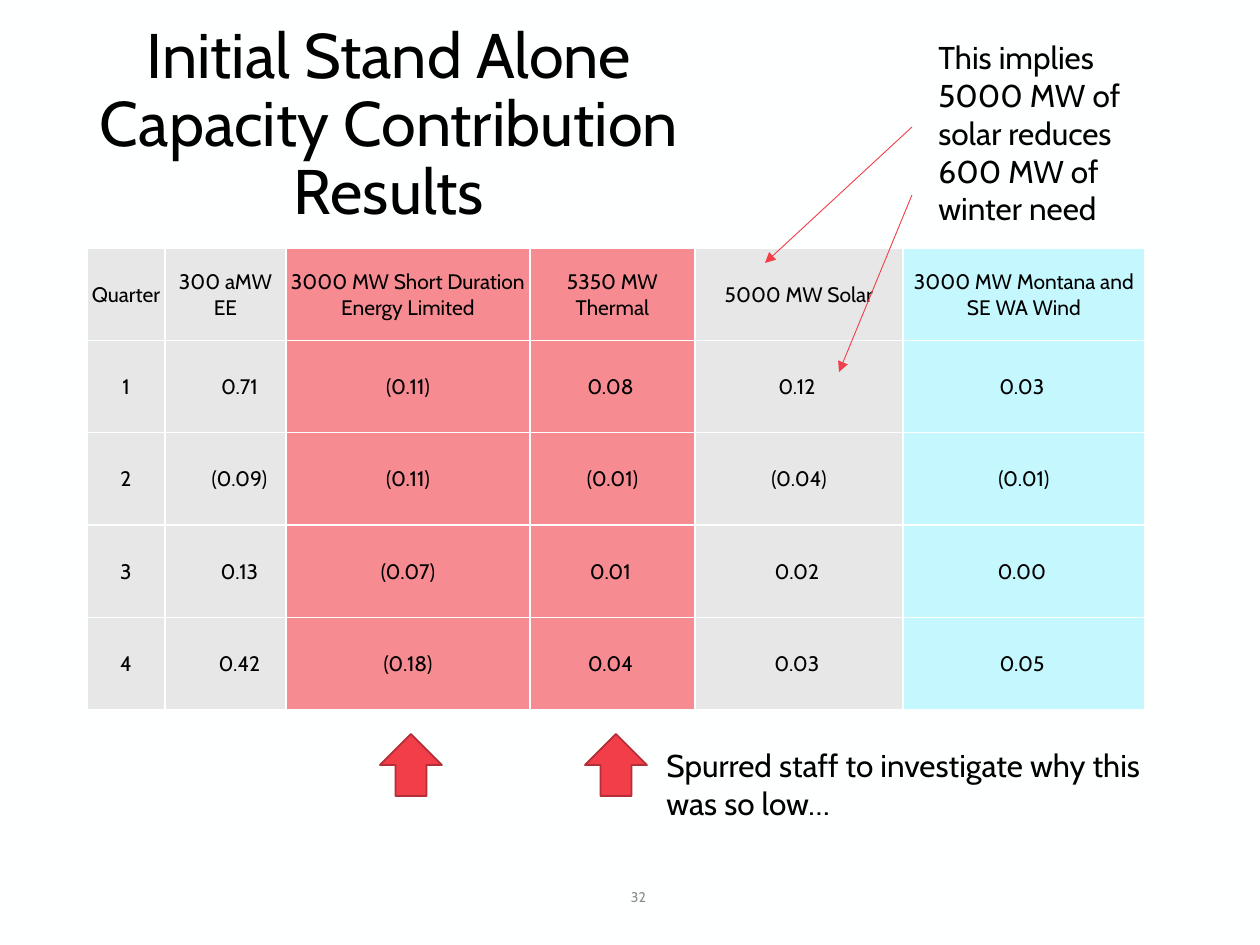
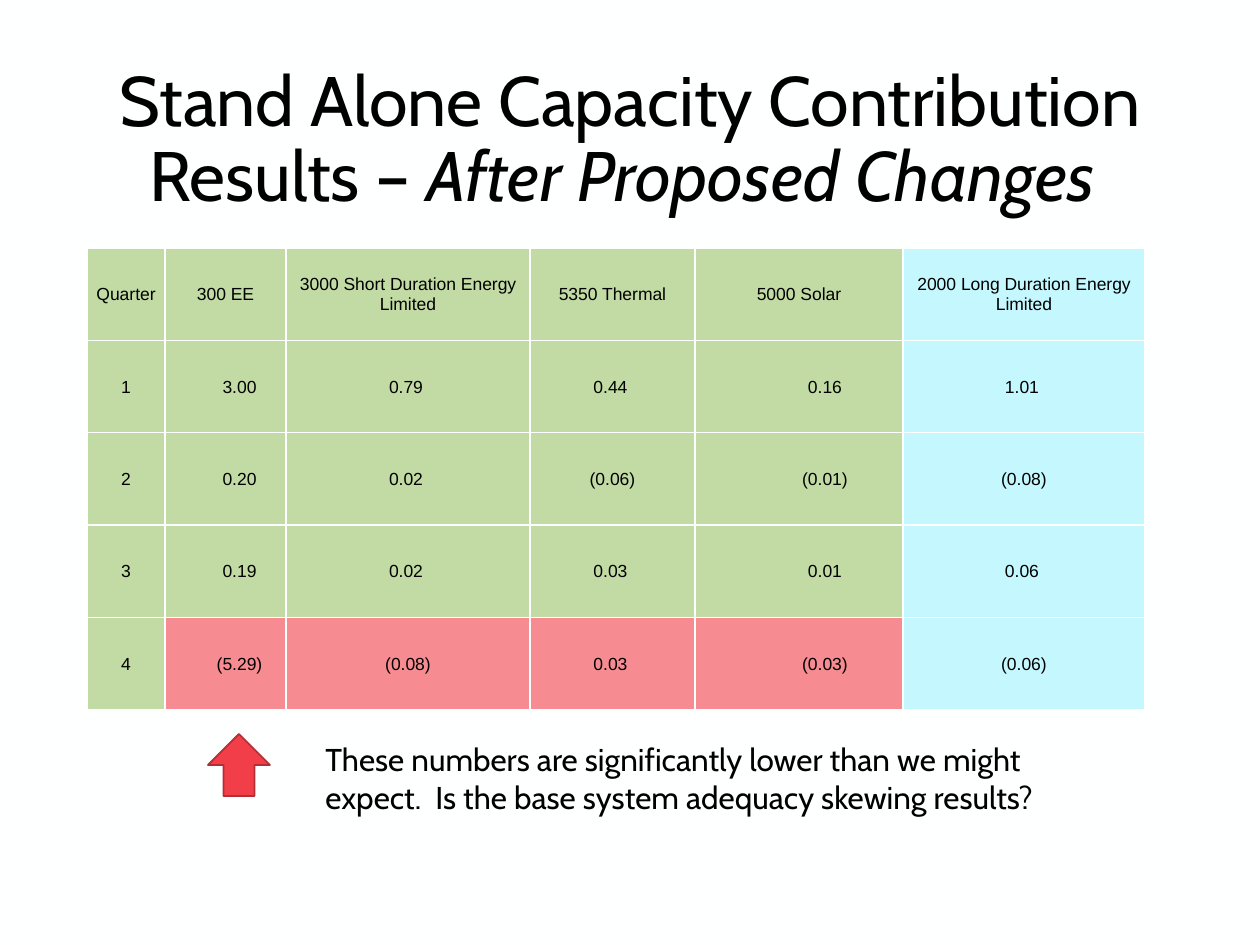
from pptx import Presentation
from pptx.dml.color import RGBColor
from pptx.enum.shapes import MSO_CONNECTOR, MSO_SHAPE
from pptx.enum.text import MSO_ANCHOR, PP_ALIGN
from pptx.oxml import parse_xml
from pptx.oxml.ns import nsdecls
from pptx.util import Emu, Pt

EMU_PER_PX = 914400 / 126
FONT = "Cabin"

PAPER = RGBColor(0xFE, 0xFF, 0xFF)
BLACK = RGBColor(0x00, 0x00, 0x00)
MUTED = RGBColor(0x8C, 0x8C, 0x8C)
GRAY = RGBColor(0xE7, 0xE7, 0xE7)
PINK = RGBColor(0xF7, 0x8B, 0x92)
CYAN = RGBColor(0xC4, 0xF8, 0xFE)
GREEN = RGBColor(0xC2, 0xDB, 0xA4)
RED = RGBColor(0xF2, 0x3E, 0x49)
DARK_RED = RGBColor(0xB3, 0x2E, 0x36)

# Table grid shared by both slides
TABLE_LEFT, TABLE_TOP, TABLE_HEIGHT = 87, 248, 462
COLUMN_WIDTHS = [78, 121, 244, 165, 208, 242]
PAREN_ROOM = 4  # keeps plain numbers in line with parenthesised ones

INITIAL_RESULTS = [
    ["Quarter", "300 aMW EE", "3000 MW Short Duration Energy Limited",
     "5350 MW Thermal", "5000 MW Solar", "3000 MW Montana and SE WA Wind"],
    ["1", "0.71", "(0.11)", "0.08", "0.12", "0.03"],
    ["2", "(0.09)", "(0.11)", "(0.01)", "(0.04)", "(0.01)"],
    ["3", "0.13", "(0.07)", "0.01", "0.02", "0.00"],
    ["4", "0.42", "(0.18)", "0.04", "0.03", "0.05"],
]
CHANGED_RESULTS = [
    ["Quarter", "300 EE", "3000 Short Duration Energy Limited",
     "5350 Thermal", "5000 Solar", "2000 Long Duration Energy Limited"],
    ["1", "3.00", "0.79", "0.44", "0.16", "1.01"],
    ["2", "0.20", "0.02", "(0.06)", "(0.01)", "(0.08)"],
    ["3", "0.19", "0.02", "0.03", "0.01", "0.06"],
    ["4", "(5.29)", "(0.08)", "0.03", "(0.03)", "(0.06)"],
]


def px(n):
    return Emu(round(n * EMU_PER_PX))


def style_run(r, size, color=BLACK, font=FONT):
    r.font.size = Pt(size)
    r.font.name = font
    r.font.color.rgb = color


def add_slide(prs):
    s = prs.slides.add_slide(prs.slide_layouts[6])
    s.background.fill.solid()
    s.background.fill.fore_color.rgb = PAPER
    return s


def add_text(s, box, text, size, color=BLACK, align=PP_ALIGN.LEFT,
             anchor=MSO_ANCHOR.TOP):
    tf = s.shapes.add_textbox(*map(px, box)).text_frame
    tf.word_wrap = True
    tf.vertical_anchor = anchor
    p = tf.paragraphs[0]
    p.text = text
    p.alignment = align
    style_run(p.runs[0], size, color)
    return p


def add_title(s, box, text, size, emphasis=None):
    p = add_text(s, box, text, size, align=PP_ALIGN.CENTER,
                 anchor=MSO_ANCHOR.MIDDLE)
    p.line_spacing = 0.9
    if emphasis:
        r = p.add_run()
        r.text = emphasis
        style_run(r, size)
        r.font.italic = True


def add_cell_borders(cell):
    tcPr = cell._tc.get_or_add_tcPr()
    for side in ("lnL", "lnR", "lnT", "lnB"):
        tcPr.append(parse_xml(
            f'<a:{side} {nsdecls("a")} w="12700"><a:solidFill>'
            f'<a:srgbClr val="{PAPER}"/></a:solidFill></a:{side}>'))


def fill_cell(cell, text, size, font, color, indent, right_room):
    add_cell_borders(cell)
    cell.fill.solid()
    cell.fill.fore_color.rgb = color
    cell.margin_left, cell.margin_right = px(1 + indent), px(1 + right_room)
    cell.margin_top, cell.margin_bottom = px(1), px(0)
    cell.vertical_anchor = MSO_ANCHOR.MIDDLE
    p = cell.text_frame.paragraphs[0]
    p.text = text
    p.alignment = PP_ALIGN.CENTER
    style_run(p.runs[0], size, font=font)


def add_results_table(s, rows, size, font, color_at, indents):
    """color_at(row, col) gives a cell's fill; indents maps col to px."""
    table = s.shapes.add_table(
        len(rows), len(COLUMN_WIDTHS), px(TABLE_LEFT), px(TABLE_TOP),
        px(sum(COLUMN_WIDTHS)), px(TABLE_HEIGHT)).table
    table.first_row = table.horz_banding = False
    for column, width in zip(table.columns, COLUMN_WIDTHS):
        column.width = px(width)
    for i, row in enumerate(rows):
        table.rows[i].height = px(TABLE_HEIGHT / len(rows))
        for j, text in enumerate(row):
            is_value = i > 0 and j > 0
            indent = indents.get(j, 0) if is_value else 0
            plain = is_value and not indent and "(" not in text
            fill_cell(table.cell(i, j), text, size, font, color_at(i, j),
                      indent, PAREN_ROOM if plain else 0)


def add_up_arrow(s, left):
    sp = s.shapes.add_shape(MSO_SHAPE.UP_ARROW,
                            *map(px, (left, 734, 62, 62)))
    sp.shadow.inherit = False
    sp.fill.solid()
    sp.fill.fore_color.rgb = RED
    sp.line.color.rgb = DARK_RED
    sp.line.width = Pt(1)


def add_pointer(s, x1, y1, x2, y2):
    line = s.shapes.add_connector(MSO_CONNECTOR.STRAIGHT,
                                  *map(px, (x1, y1, x2, y2)))
    line.line.color.rgb = RED
    line.line.width = Pt(0.5)
    line.line._get_or_add_ln().append(
        parse_xml(f'<a:tailEnd {nsdecls("a")} type="triangle"/>'))
    line._element.spPr.append(parse_xml(f'<a:effectLst {nsdecls("a")}/>'))


def initial_color(row, col):
    return [GRAY, GRAY, PINK, PINK, GRAY, CYAN][col]


def changed_color(row, col):
    if col == 5:
        return CYAN
    return PINK if row == 4 and col > 0 else GREEN


def build_initial_results(prs):
    s = add_slide(prs)
    add_title(s, (87, 35, 604, 183),
              "Initial Stand Alone Capacity Contribution Results", 36)
    add_results_table(s, INITIAL_RESULTS, 12, FONT, initial_color, {1: 28})

    # Slide number
    add_text(s, (602, 872, 73, 50), "32", 8, MUTED, PP_ALIGN.CENTER,
             MSO_ANCHOR.MIDDLE)

    # Low columns
    for left in (380, 585):
        add_up_arrow(s, left)
    add_text(s, (654, 740, 519, 89),
             "Spurred staff to investigate why this was so low…", 18)

    # Solar remark
    add_pointer(s, 912, 127, 765, 263)
    add_pointer(s, 912, 195, 839, 372)
    add_text(s, (926, 32, 261, 204),
             "This implies 5000 MW of solar reduces 600 MW of winter need", 18)


def build_changed_results(prs):
    s = add_slide(prs)
    add_title(s, (87, 50, 1086, 183),
              "Stand Alone Capacity Contribution Results – ", 40,
              "After Proposed Changes ")
    add_results_table(s, CHANGED_RESULTS, 10, "Arial", changed_color,
                      {1: 28, 4: 52})

    # Low last quarter
    add_up_arrow(s, 208)
    add_text(s, (313, 734, 782, 127),
             "These numbers are significantly lower than we might expect.  "
             "Is the base system adequacy skewing results?", 18)


def main():
    prs = Presentation()
    prs.slide_width, prs.slide_height = px(1260), px(945)
    build_initial_results(prs)
    build_changed_results(prs)
    prs.save("out.pptx")


if __name__ == "__main__":
    main()
